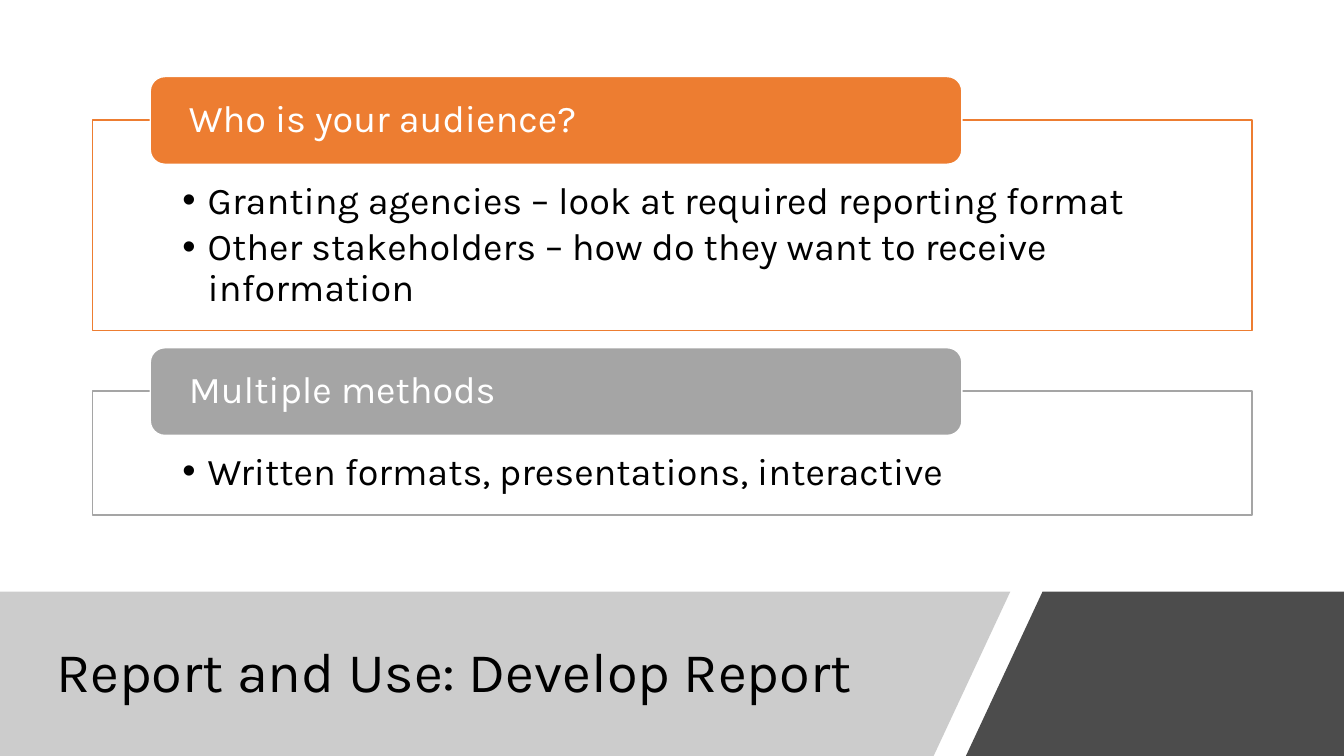
from dataclasses import dataclass

from lxml.etree import SubElement
from pptx import Presentation
from pptx.dml.color import RGBColor
from pptx.enum.shapes import MSO_SHAPE as SHAPE
from pptx.enum.text import MSO_ANCHOR as ANCHOR, PP_ALIGN as ALIGN
from pptx.oxml.ns import qn
from pptx.util import Pt

PX = 9144
SLIDE_W, SLIDE_H = 1333, 750


@dataclass(frozen=True)
class Theme:
    """Colours, font and type sizes of the slide."""
    font: str = "Karla"
    white: str = "FFFFFF"
    black: str = "000000"
    orange: str = "ED7D31"
    grey: str = "A5A5A5"
    band: str = "808080"
    title_size: int = 40
    body_size: int = 27
    line_width: int = 1


T = Theme()

SECTIONS = [
    ("Who is your audience?", T.orange, 209, [
        "Granting agencies – look at required reporting format",
        "Other stakeholders – how do they want to receive information"]),
    ("Multiple methods", T.grey, 123, [
        "Written formats, presentations, interactive"]),
]


def px(*lengths):
    """Turn px lengths into EMU."""
    return [n * PX for n in lengths]


def paint(sp, fill, alpha=100, line=None):
    """Set fill, opacity in percent and outline, without shadow."""
    sp.shadow.inherit = False
    sp.fill.solid()
    sp.fill.fore_color.rgb = RGBColor.from_string(fill)
    if alpha < 100:
        color = sp.fill._xPr.find(qn("a:solidFill"))[0]
        SubElement(color, qn("a:alpha"), val=str(alpha * 1000))
    if line:
        sp.line.color.rgb = RGBColor.from_string(line)
        sp.line.width = Pt(T.line_width)
    else:
        sp.line.fill.background()


def frame(sp, anchor, left, top, right, bottom):
    """Prepare the text frame of a shape with px insets."""
    tf = sp.text_frame
    tf.word_wrap = True
    tf.vertical_anchor = anchor
    tf.margin_left, tf.margin_top, tf.margin_right, tf.margin_bottom = px(
        left, top, right, bottom)
    return tf


def write(p, text, size, color):
    """Add one left-aligned run to a paragraph."""
    p.alignment = ALIGN.LEFT
    p.line_spacing = 0.9
    r = p.add_run()
    r.text = text
    r.font.name = T.font
    r.font.size = Pt(size)
    r.font.color.rgb = RGBColor.from_string(color)


def bullet(p, indent):
    """Give a paragraph a hanging bullet."""
    p.level = 1
    p.space_after = Pt(4)
    pPr = p._p.get_or_add_pPr()
    pPr.set("marL", str(indent * PX))
    pPr.set("indent", str(-indent * PX))
    SubElement(pPr, qn("a:buFont"), typeface="Arial")
    SubElement(pPr, qn("a:buChar"), char="•")


def add_section(s, x, y, w, h, heading, color, items):
    """Draw an outlined list with a heading tab across its top edge."""
    sp = s.shapes.add_shape(SHAPE.RECTANGLE, *px(x, y, w, h))
    paint(sp, T.white, 90, color)
    tf = frame(sp, ANCHOR.TOP, 89, 61, 89, 21)
    for i, item in enumerate(items):
        p = tf.add_paragraph() if i else tf.paragraphs[0]
        write(p, item, T.body_size, T.black)
        bullet(p, 25)

    tab = s.shapes.add_shape(
        SHAPE.ROUNDED_RECTANGLE, *px(x + 57, y - 43, w * 7 // 10, 87))
    paint(tab, color, line=T.white)
    tf = frame(tab, ANCHOR.MIDDLE, 34, 4, 34, 4)
    write(tf.paragraphs[0], heading, T.body_size, T.white)


def add_panel(s, points, color, alpha):
    """Draw a closed translucent polygon."""
    start, *rest = points
    fb = s.shapes.build_freeform(*start, scale=PX)
    fb.add_line_segments(rest, close=True)
    paint(fb.convert_to_shape(), color, alpha)


def add_title_band(s, x, y, w, h, title):
    """Draw the slanted footer band with the slide title."""
    right, bottom, slant = x + w, y + h, 76
    light, dark = x + 1002, x + 1034
    add_panel(s, [(x, y), (light, y), (light - slant, bottom), (x, bottom)],
              T.band, 40)
    add_panel(s, [(dark, y), (right, y), (right, bottom),
                  (dark - slant, bottom)], T.black, 70)
    tb = s.shapes.add_textbox(*px(x + 46, y + 22, 910, 120))
    tf = frame(tb, ANCHOR.MIDDLE, 10, 5, 10, 5)
    write(tf.paragraphs[0], title, T.title_size, T.black)


def main():
    """Build and save the slide."""
    prs = Presentation()
    prs.slide_width, prs.slide_height = px(SLIDE_W, SLIDE_H)
    s = prs.slides.add_slide(prs.slide_layouts[6])
    add_title_band(s, 0, 587, SLIDE_W, 163, "Report and Use: Develop Report")
    y, gap = 119, 60
    for heading, color, h, items in SECTIONS:
        add_section(s, 92, y, 1150, h, heading, color, items)
        y += h + gap
    prs.save("out.pptx")


if __name__ == "__main__":
    main()
